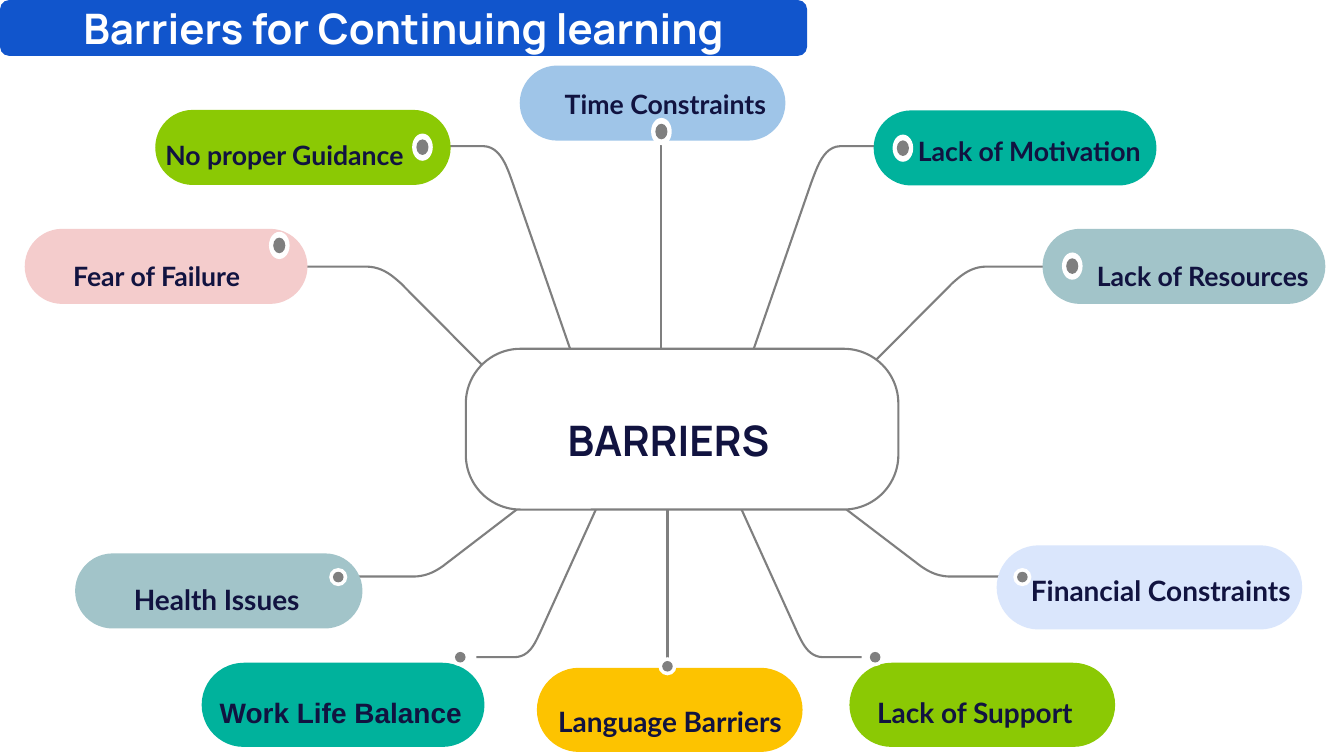
from lxml import etree
from pptx import Presentation
from pptx import util as u
from pptx.dml.color import RGBColor
from pptx.enum import shapes, text
from pptx.oxml.ns import qn

WHITE = RGBColor(0xFF, 0xFF, 0xFF)
GRAY = RGBColor(0x7F, 0x7F, 0x7F)
NAVY = RGBColor(0x11, 0x13, 0x40)
BLUE = RGBColor(0x11, 0x55, 0xCC)
SKY = RGBColor(0x9F, 0xC5, 0xE8)
GREEN = RGBColor(0x8B, 0xC9, 0x04)
TEAL = RGBColor(0x00, 0xB2, 0x9C)
PINK = RGBColor(0xF4, 0xCC, 0xCC)
MIST = RGBColor(0xA2, 0xC4, 0xC9)
YELLOW = RGBColor(0xFD, 0xC3, 0x00)
LAVENDER = RGBColor(0xDA, 0xE6, 0xFC)
LEFT, CENTER, RIGHT = text.PP_ALIGN.LEFT, text.PP_ALIGN.CENTER, text.PP_ALIGN.RIGHT

deck = Presentation()
deck.slide_width, deck.slide_height = u.Inches(26.66), u.Inches(15)
page = deck.slides.add_slide(deck.slide_layouts[6])


def write_text(box, words, size=38, font="Lato", color=NAVY, align=LEFT, spacing=None, inset=(0.1, 0.05)):
    frame = box.text_frame
    frame.word_wrap = True
    frame.vertical_anchor = text.MSO_ANCHOR.MIDDLE
    frame.margin_left = frame.margin_right = u.Inches(inset[0])
    frame.margin_top = frame.margin_bottom = u.Inches(inset[1])
    para = frame.paragraphs[0]
    para.alignment = align
    para.line_spacing = spacing
    span = para.add_run()
    span.text = words
    span.font.size = u.Pt(size)
    span.font.name = font
    span.font.bold = True
    span.font.color.rgb = color


def add_block(kind, left, top, width, height, fill, rounding=None):
    block = page.shapes.add_shape(kind, u.Inches(left), u.Inches(top), u.Inches(width), u.Inches(height))
    block.shadow.inherit = False
    block.fill.solid()
    block.fill.fore_color.rgb = fill
    block.line.fill.background()
    if rounding is not None:
        block.adjustments[0] = rounding
    return block


for x, top, bottom in [(13.11, 2.59, 7.31), (13.24, 10.11, 13.23)]:
    stem = page.shapes.add_connector(
        shapes.MSO_CONNECTOR.STRAIGHT, u.Inches(x), u.Inches(top), u.Inches(x), u.Inches(bottom))
    stem.line.color.rgb = GRAY
    stem.line.width = u.Pt(3)
    etree.SubElement(stem._element.spPr, qn("a:effectLst"))

# start, four bezier points of the bend, end
branches = [
    [(9.64, 7.32), (7.95, 5.62), (7.79, 5.48), (7.6, 5.3), (7.28, 5.29), (6, 5.29)],
    [(17.2, 7.32), (18.89, 5.62), (19.05, 5.48), (19.24, 5.3), (19.55, 5.29), (20.84, 5.29)],
    [(11.45, 7.33), (10.17, 3.63), (10.06, 3.32), (9.93, 2.91), (9.59, 2.9), (8.7, 2.9)],
    [(14.81, 7.33), (16.09, 3.63), (16.21, 3.32), (16.33, 2.91), (16.67, 2.9), (17.56, 2.9)],
    [(11.82, 10.11), (10.71, 12.56), (10.61, 12.76), (10.51, 13.03), (10.21, 13.04), (9.45, 13.04)],
    [(14.71, 10.11), (15.82, 12.56), (15.92, 12.76), (16.03, 13.03), (16.32, 13.04), (17.09, 13.04)],
    [(16.79, 10.11), (18.26, 11.23), (18.39, 11.32), (18.56, 11.43), (18.83, 11.44), (19.94, 11.44)],
    [(10.25, 10.11), (8.79, 11.23), (8.66, 11.32), (8.49, 11.43), (8.22, 11.44), (7.11, 11.44)],
]
STEPS = 12
for start, *bend, end in branches:
    points = []
    for step in range(STEPS + 1):
        t = step / STEPS
        weights = [(1 - t) ** 3, 3 * t * (1 - t) ** 2, 3 * t ** 2 * (1 - t), t ** 3]
        points.append([sum(w * p[axis] for w, p in zip(weights, bend)) for axis in (0, 1)])
    outline = page.shapes.build_freeform(u.Inches(start[0]), u.Inches(start[1]))
    outline.add_line_segments([(u.Inches(x), u.Inches(y)) for x, y in points + [end]], close=False)
    branch = outline.convert_to_shape()
    branch.shadow.inherit = False
    branch.fill.background()
    branch.line.color.rgb = GRAY
    branch.line.width = u.Pt(3)

hub = add_block(shapes.MSO_SHAPE.ROUNDED_RECTANGLE, 9.24, 6.92, 8.58, 3.19, WHITE, 0.34)
hub.line.color.rgb = GRAY
hub.line.width = u.Pt(3)

# pill place, fill, marker centre
OVAL = ((0.41, 0.54), (0.24, 0.31))
ROUND = ((0.36, 0.36), (0.21, 0.21))
pills = [
    (0.49, 4.54, 5.61, 1.49, PINK, 5.54, 4.87, OVAL),
    (20.68, 4.54, 5.61, 1.49, MIST, 21.27, 5.28, OVAL),
    (3.08, 2.18, 5.86, 1.49, GREEN, 8.38, 2.92, OVAL),
    (17.33, 2.19, 5.61, 1.49, TEAL, 17.91, 2.94, OVAL),
    (10.31, 1.3, 5.27, 1.49, SKY, 13.12, 2.61, OVAL),
    (10.65, 13.25, 5.27, 1.67, YELLOW, 13.24, 13.22, ROUND),
    (4, 13.15, 5.61, 1.67, TEAL, 9.13, 13.04, ROUND),
    (16.85, 13.15, 5.27, 1.67, GREEN, 17.36, 13.04, ROUND),
    (1.49, 10.98, 5.7, 1.49, MIST, 6.71, 11.45, ROUND),
    (19.77, 10.82, 6.06, 1.67, LAVENDER, 20.28, 11.45, ROUND),
]
for left, top, width, height, fill, x, y, marker in pills:
    add_block(shapes.MSO_SHAPE.ROUNDED_RECTANGLE, left, top, width, height, fill, 0.5)
    for (across, down), color in zip(marker, (WHITE, GRAY)):
        add_block(shapes.MSO_SHAPE.OVAL, x - across / 2, y - down / 2, across, down, color)

labels = [
    ("BARRIERS", 9.71, 8.17, 7.1, 1.11, dict(size=60, font="Manrope", align=CENTER)),
    ("No proper Guidance", 3.18, 2.55, 5.27, 0.74, dict(spacing=1.46)),
    ("Fear of Failure", 0.78, 4.96, 4.08, 0.74, dict(spacing=1.46, align=RIGHT)),
    ("Health Issues", 2.52, 11.35, 3.52, 0.77, dict(spacing=1.46, size=40, align=RIGHT)),
    ("Work Life Balance", 4.26, 13.6, 5.61, 0.77, dict(spacing=1.46, size=40, font="Arial")),
    ("Lack of Motivation", 18.11, 2.48, 5.27, 0.74, dict(spacing=1.46)),
    ("Lack of Resources", 21.66, 4.96, 4.69, 0.74, dict(spacing=1.46)),
    ("Financial Constraints", 20.35, 11.18, 5.7, 0.77, dict(spacing=1.46, size=40)),
    ("Lack of Support", 17.3, 13.6, 5.27, 0.77, dict(spacing=1.46, size=40)),
    ("Time Constraints", 10.75, 1.55, 4.9, 0.74, dict(spacing=1.46, align=CENTER)),
    ("Language Barriers", 10.84, 13.78, 4.9, 0.77, dict(spacing=1.46, size=40, align=CENTER)),
]
for words, left, top, width, height, style in labels:
    box = page.shapes.add_textbox(u.Inches(left), u.Inches(top), u.Inches(width), u.Inches(height))
    write_text(box, words, **style)
    box.text_frame.auto_size = text.MSO_AUTO_SIZE.SHAPE_TO_FIT_TEXT

banner = add_block(shapes.MSO_SHAPE.ROUNDED_RECTANGLE, 0, 0, 16.01, 1.11, BLUE, 0.167)
write_text(banner, "Barriers for Continuing learning", size=60, font="Manrope",
           color=WHITE, align=CENTER, inset=(0.27, 0.27))

deck.save("out.pptx")
